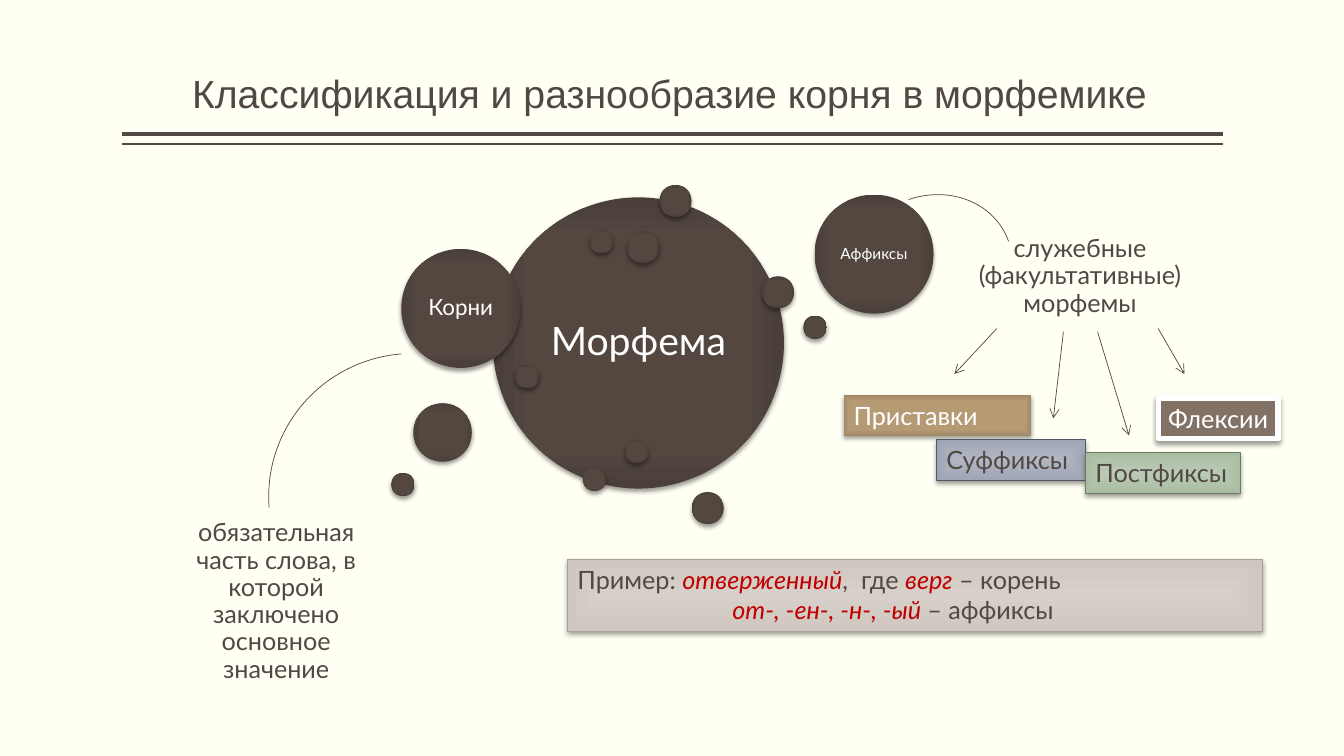
from lxml import etree
from pptx import Presentation
from pptx.dml.color import RGBColor
from pptx.enum.shapes import MSO_CONNECTOR, MSO_SHAPE
from pptx.enum.text import MSO_ANCHOR, MSO_AUTO_SIZE, PP_ALIGN
from pptx.oxml import parse_xml
from pptx.oxml.ns import qn
from pptx.util import Pt

STRAIGHT = MSO_CONNECTOR.STRAIGHT
RECTANGLE, OVAL, ARC = MSO_SHAPE.RECTANGLE, MSO_SHAPE.OVAL, MSO_SHAPE.ARC
MIDDLE, BOTTOM, TOP = MSO_ANCHOR.MIDDLE, MSO_ANCHOR.BOTTOM, MSO_ANCHOR.TOP
CENTER, LEFT = PP_ALIGN.CENTER, PP_ALIGN.LEFT
GROW = MSO_AUTO_SIZE.SHAPE_TO_FIT_TEXT
DRAWING = "http://schemas.openxmlformats.org/drawingml/2006/main"

COLORS = {"paper": "FFFFF3", "ink": "514843", "white": "FFFFFF", "red": "C00000",
          "taupe": "827266", "blue line": "505868", "green line": "6A7B63",
          "example line": "A59F9A"}
# Stops of (percent, colour), from the centre to the edge
GRADIENTS = {
    "brown": [(0, "544740"), (71, "534740"), (100, "4A3F39")],
    "sand": [(0, "B79B75"), (71, "B59A74"), (100, "A18967")],
    "blue": [(0, "B1B6C2"), (100, "9EA5B5")],
    "green": [(0, "BAC9B4"), (100, "AABDA3")],
    "example": [(0, "D7D0CA"), (100, "CFC7BF")],
}

TITLE = "Классификация и разнообразие корня в морфемике"
RULES = [(95.8, 3), (103, 1)]  # height on the slide, line width
DEFINITIONS = [
    ("обязательная часть слова, в которой заключено основное значение",
     (132.5, 339.8, 129.6, 152)),
    ("служебные (факультативные) морфемы", (695.5, 135.4, 152, 95)),
]
HUGE, LARGE, MEDIUM, SMALL, TINY = 208, 85, 41.8, 23, 16.8
CIRCLES = [  # left, top, diameter, text, text size
    (352, 141, HUGE, "Морфема", 28),
    (471, 132, SMALL, "", 0), (416.2, 334, TINY, "", 0),
    (573.8, 225.4, TINY, "", 0), (494, 351.4, SMALL, "", 0),
    (421.2, 164.2, TINY, "", 0), (368, 260.6, TINY, "", 0),
    (286.6, 177.8, LARGE, "Корни", 16),
    (447.8, 165, SMALL, "", 0), (295.2, 288, MEDIUM, "", 0),
    (581.8, 139, LARGE, "Аффиксы", 11),
    (544.3, 197.3, SMALL, "", 0), (279.4, 337.7, TINY, "", 0),
    (446.4, 314, TINY, "", 0),
]
ARCS = [((608.4, 139.7, 115.2, 103), 340.8), ((193, 251.3, 203.8, 206), 265.4)]
ARROWS = [(712, 234.7, 681.8, 267.1), (759.6, 236.9, 752.4, 298.8),
          (784, 236.9, 806.4, 311), (827.3, 234.7, 846, 267.1)]
AFFIXES = [  # text, place, fill, text colour, line colour, line width, wrap
    ("Приставки", (602.6, 282.2, 134, 29), "sand", "white", None, 0, True),
    ("Суффиксы", (668.9, 313.9, 106.6, 29), "blue", "ink", "blue line", 0.5, False),
    ("Флексии", (827.3, 284.4, 85.7, 29), "taupe", "white", "white", 3.82, False),
    ("Постфиксы", (775.4, 323.3, 110.9, 29), "green", "ink", "green line", 0.5, False),
]
EXAMPLE_PLACE = (405.4, 399.6, 496, 51.1)
EXAMPLE = [  # left indent, then runs of (text, is highlighted)
    (0, [("Пример: ", False), ("отверженный", True), (",  где ", False),
         ("верг", True), (" – корень", False)]),
    (110.7, [("от-, -ен-, -н-, -ый ", True), ("– аффиксы", False)]),
]


def rgb(name):
    return RGBColor.from_string(COLORS[name])


def points(values):
    return [Pt(value) for value in values]


def style_run(run, size, color, font="Lato", italic=False):
    run.font.name, run.font.size = font, Pt(size)
    run.font.color.rgb, run.font.italic = rgb(color), italic


def set_frame(text_frame, anchor, insets, wrap=True):
    text_frame.word_wrap, text_frame.vertical_anchor = wrap, anchor
    (text_frame.margin_left, text_frame.margin_top,
     text_frame.margin_right, text_frame.margin_bottom) = points(insets)


def write(text_frame, text, size, color, align=LEFT, spacing=None, font="Lato"):
    text_frame.text = text
    paragraph = text_frame.paragraphs[0]
    paragraph.alignment, paragraph.line_spacing = align, spacing
    style_run(paragraph.runs[0], size, color, font)


def add_text(slide, text, place, size, font="Lato", bottom=3.6):
    text_frame = slide.shapes.add_textbox(*points(place)).text_frame
    set_frame(text_frame, BOTTOM, (0, 3.6, 0, bottom))
    write(text_frame, text, size, "ink", CENTER, 0.9, font)


def add_raised(slide, kind, place, fill, line=None, width=0, blur=3.1):
    """Add a shape with a flat or centre-out gradient fill and a soft shadow below."""
    shape = slide.shapes.add_shape(kind, *points(place))
    properties = shape.element.spPr
    if fill in GRADIENTS:
        stops = "".join(f'<a:gs pos="{percent * 1000}"><a:srgbClr val="{color}"/></a:gs>'
                        for percent, color in GRADIENTS[fill])
        properties.insert(2, parse_xml(
            f'<a:gradFill xmlns:a="{DRAWING}" rotWithShape="1"><a:gsLst>{stops}</a:gsLst>'
            '<a:path path="rect"><a:fillToRect l="50000" t="50000" r="50000" b="50000"/>'
            '</a:path></a:gradFill>'))
    else:
        shape.fill.solid()
        shape.fill.fore_color.rgb = rgb(fill)
    if line:
        shape.line.color.rgb, shape.line.width = rgb(line), Pt(width)
    else:
        shape.line.fill.background()
    shape.shadow.inherit = False
    properties.find(qn("a:effectLst")).append(parse_xml(
        f'<a:outerShdw xmlns:a="{DRAWING}" blurRad="{Pt(blur)}" dist="{Pt(2)}" '
        'dir="5400000" rotWithShape="0"><a:srgbClr val="000000">'
        '<a:alpha val="38000"/></a:srgbClr></a:outerShdw>'))
    return shape


def add_line(slide, ends, width, arrow=False):
    line = slide.shapes.add_connector(STRAIGHT, *points(ends))
    line.line.color.rgb, line.line.width = rgb("ink"), Pt(width)
    if arrow:
        etree.SubElement(line.line._get_or_add_ln(), qn("a:tailEnd"), type="arrow")
    etree.SubElement(line.element.spPr, qn("a:effectLst"))


def add_arc(slide, place, rotation):
    arc = slide.shapes.add_shape(ARC, *points(place))
    arc.rotation = rotation
    arc.fill.background()
    arc.line.color.rgb, arc.line.width = rgb("ink"), Pt(0.5)
    arc.shadow.inherit = False


def add_circle(slide, left, top, diameter, text, size):
    circle = add_raised(slide, OVAL, (left, top, diameter, diameter), "brown")
    if text:
        set_frame(circle.text_frame, MIDDLE, (0, 0, 0, 0), False)
        write(circle.text_frame, text, size, "white", CENTER, 0.9)


def add_affix(slide, text, place, fill, color, line, width, wrap):
    box = add_raised(slide, RECTANGLE, place, fill, line, width, 3.5 if line else 3.1)
    set_frame(box.text_frame, TOP, (7.2, 3.6, 7.2, 3.6), wrap)
    box.text_frame.auto_size = GROW
    write(box.text_frame, text, 18, color)


def add_example(slide):
    box = add_raised(slide, RECTANGLE, EXAMPLE_PLACE, "example", "example line", 0.5, 3.5)
    text_frame = box.text_frame
    set_frame(text_frame, TOP, (7.2, 3.6, 7.2, 3.6))
    text_frame.auto_size = GROW
    for index, (indent, runs) in enumerate(EXAMPLE):
        paragraph = text_frame.add_paragraph() if index else text_frame.paragraphs[0]
        paragraph.alignment = LEFT
        paragraph._p.get_or_add_pPr().set("marL", str(Pt(indent)))
        for text, highlighted in runs:
            run = paragraph.add_run()
            run.text = text
            style_run(run, 18, "red" if highlighted else "ink", italic=highlighted)


def main():
    presentation = Presentation()
    presentation.slide_width, presentation.slide_height = Pt(960), Pt(540)
    slide = presentation.slides.add_slide(presentation.slide_layouts[6])
    slide.background.fill.solid()
    slide.background.fill.fore_color.rgb = rgb("paper")

    for top, width in RULES:
        add_line(slide, (873.4, top, 87.1, top), width)
    add_text(slide, TITLE, (85, 35.3, 786.2, 86.4), 28, "Arial", bottom=38)
    for circle in CIRCLES:
        add_circle(slide, *circle)
    for text, place in DEFINITIONS:
        add_text(slide, text, place, 18)
    add_example(slide)
    for ends in ARROWS:
        add_line(slide, ends, 0.5, arrow=True)
    for affix in AFFIXES:
        add_affix(slide, *affix)
    for place, rotation in ARCS:
        add_arc(slide, place, rotation)
    presentation.save("out.pptx")


if __name__ == "__main__":
    main()
